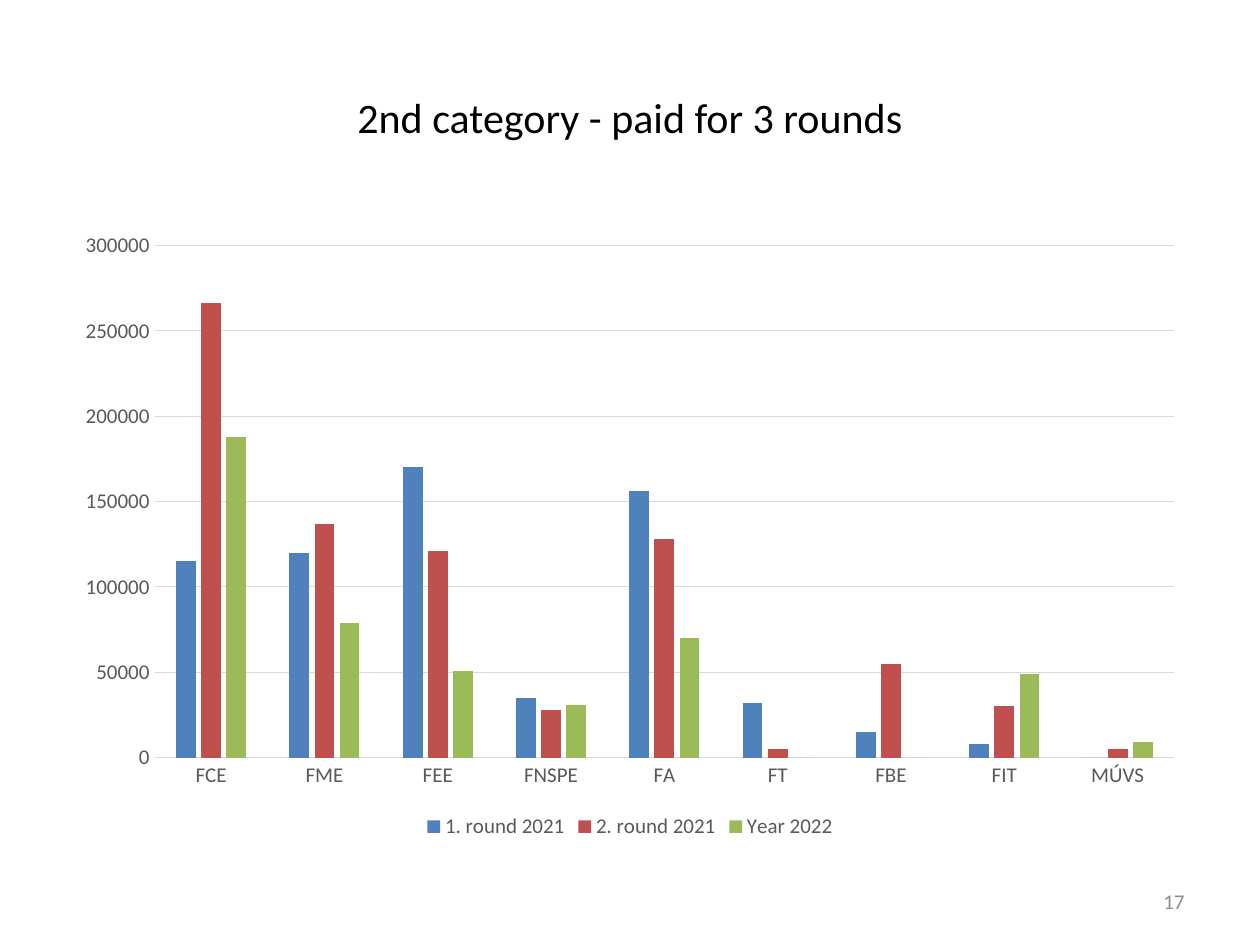
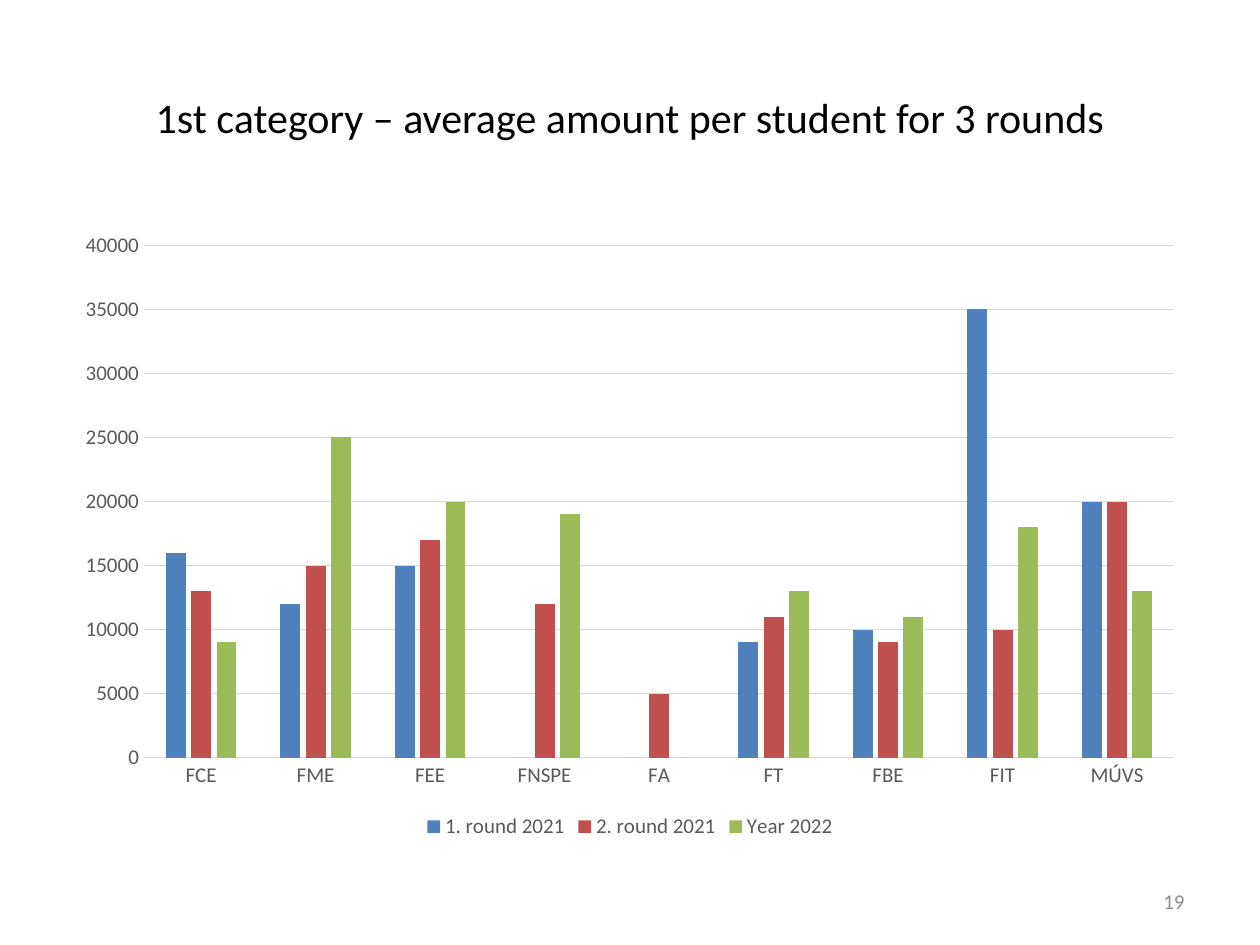
from pptx import Presentation
from pptx.chart.data import CategoryChartData
from pptx.dml.color import RGBColor
from pptx.enum.chart import XL_CHART_TYPE, XL_LEGEND_POSITION, XL_TICK_MARK
from pptx.enum.text import MSO_ANCHOR, PP_ALIGN
from pptx.util import Inches, Pt

COLUMN = XL_CHART_TYPE.COLUMN_CLUSTERED
BOTTOM = XL_LEGEND_POSITION.BOTTOM
NO_TICK = XL_TICK_MARK.NONE
MIDDLE = MSO_ANCHOR.MIDDLE
CENTER, RIGHT = PP_ALIGN.CENTER, PP_ALIGN.RIGHT

WIDTH, HEIGHT = Inches(10), Inches(7.5)
COLS, ROWS = 20, 150
FACE = "Calibri"
COLORS = {
    "page": "FFFFFF",
    "title": "000000",
    "number": "8C8C8C",
    "label": "595959",
    "grid": "D9D9D9",
    "1. round 2021": "4F81BD",
    "2. round 2021": "C0504D",
    "Year 2022": "9BBB59",
}
ROUNDS = ["1. round 2021", "2. round 2021", "Year 2022"]
UNITS = ["FCE", "FME", "FEE", "FNSPE", "FA", "FT", "FBE", "FIT", "MÚVS"]

TITLE_BOX = (1, 6, 18, 25)
CHART_BOX = (1, 35, 18, 99)
NUMBER_BOX = (14.34, 139, 4.66, 8)

SLIDES = [
    {
        "title": "2nd category - paid for 3 rounds",
        "number": "17",
        "top": 300000,
        "step": 50000,
        "paid": [
            [115000, 120000, 170000, 35000, 156000, 32000, 15000, 8000, 0],
            [266000, 137000, 121000, 28000, 128000, 5000, 55000, 30000, 5000],
            [188000, 79000, 51000, 31000, 70000, 0, 0, 49000, 9000],
        ],
    },
    {
        "title": "1st category – average amount per student for 3 rounds",
        "number": "19",
        "top": 40000,
        "step": 5000,
        "paid": [
            [16000, 12000, 15000, 0, 0, 9000, 10000, 35000, 20000],
            [13000, 15000, 17000, 12000, 5000, 11000, 9000, 10000, 20000],
            [9000, 25000, 20000, 19000, 0, 13000, 11000, 18000, 13000],
        ],
    },
]


def color(key):
    return RGBColor.from_string(COLORS[key])


def place(box):
    left, top, wide, high = box
    return (int(WIDTH * left / COLS), int(HEIGHT * top / ROWS),
            int(WIDTH * wide / COLS), int(HEIGHT * high / ROWS))


def set_font(font, size, key):
    font.name = FACE
    font.size = Pt(size)
    font.color.rgb = color(key)


def set_line(line, key):
    line.color.rgb = color(key)
    line.width = Pt(0.75)


def set_text(shape, text, size, key, align):
    frame = shape.text_frame
    frame.text = text
    frame.word_wrap = True
    frame.vertical_anchor = MIDDLE
    para = frame.paragraphs[0]
    para.alignment = align
    set_font(para.font, size, key)


def add_title(slide, box, text):
    title = slide.shapes.title
    title.left, title.top, title.width, title.height = place(box)
    set_text(title, text, 24, "title", CENTER)


def add_number(slide, box, text):
    set_text(slide.shapes.add_textbox(*place(box)), text, 12, "number", RIGHT)


def style_axis(axis):
    axis.major_tick_mark = axis.minor_tick_mark = NO_TICK
    set_font(axis.tick_labels.font, 12, "label")


def add_bars(slide, box, item):
    data = CategoryChartData(number_format="General")
    data.categories = UNITS
    for name, paid in zip(ROUNDS, item["paid"]):
        data.add_series(name, paid)
    chart = slide.shapes.add_chart(COLUMN, *place(box), data).chart
    set_font(chart.font, 10, "title")
    chart.has_title = False

    plot = chart.plots[0]
    plot.gap_width, plot.overlap = 219, -27
    plot.vary_by_categories = False
    for series in plot.series:
        series.invert_if_negative = False
        series.format.fill.solid()
        series.format.fill.fore_color.rgb = color(series.name)

    units, scale = chart.category_axis, chart.value_axis
    style_axis(units)
    style_axis(scale)
    set_line(units.format.line, "grid")
    scale.format.line.fill.background()
    scale.has_major_gridlines = True
    set_line(scale.major_gridlines.format.line, "grid")
    scale.minimum_scale, scale.maximum_scale = 0, item["top"]
    scale.major_unit = item["step"]

    chart.has_legend = True
    chart.legend.position = BOTTOM
    chart.legend.include_in_layout = False
    set_font(chart.legend.font, 12, "label")


def add_slide(deck, item):
    slide = deck.slides.add_slide(deck.slide_layouts.get_by_name("Title Only"))
    add_title(slide, TITLE_BOX, item["title"])
    add_number(slide, NUMBER_BOX, item["number"])
    add_bars(slide, CHART_BOX, item)


def main():
    deck = Presentation()
    deck.slide_width, deck.slide_height = WIDTH, HEIGHT
    fill = deck.slide_master.background.fill
    fill.solid()
    fill.fore_color.rgb = color("page")
    for item in SLIDES:
        add_slide(deck, item)
    deck.save("out.pptx")


if __name__ == "__main__":
    main()
